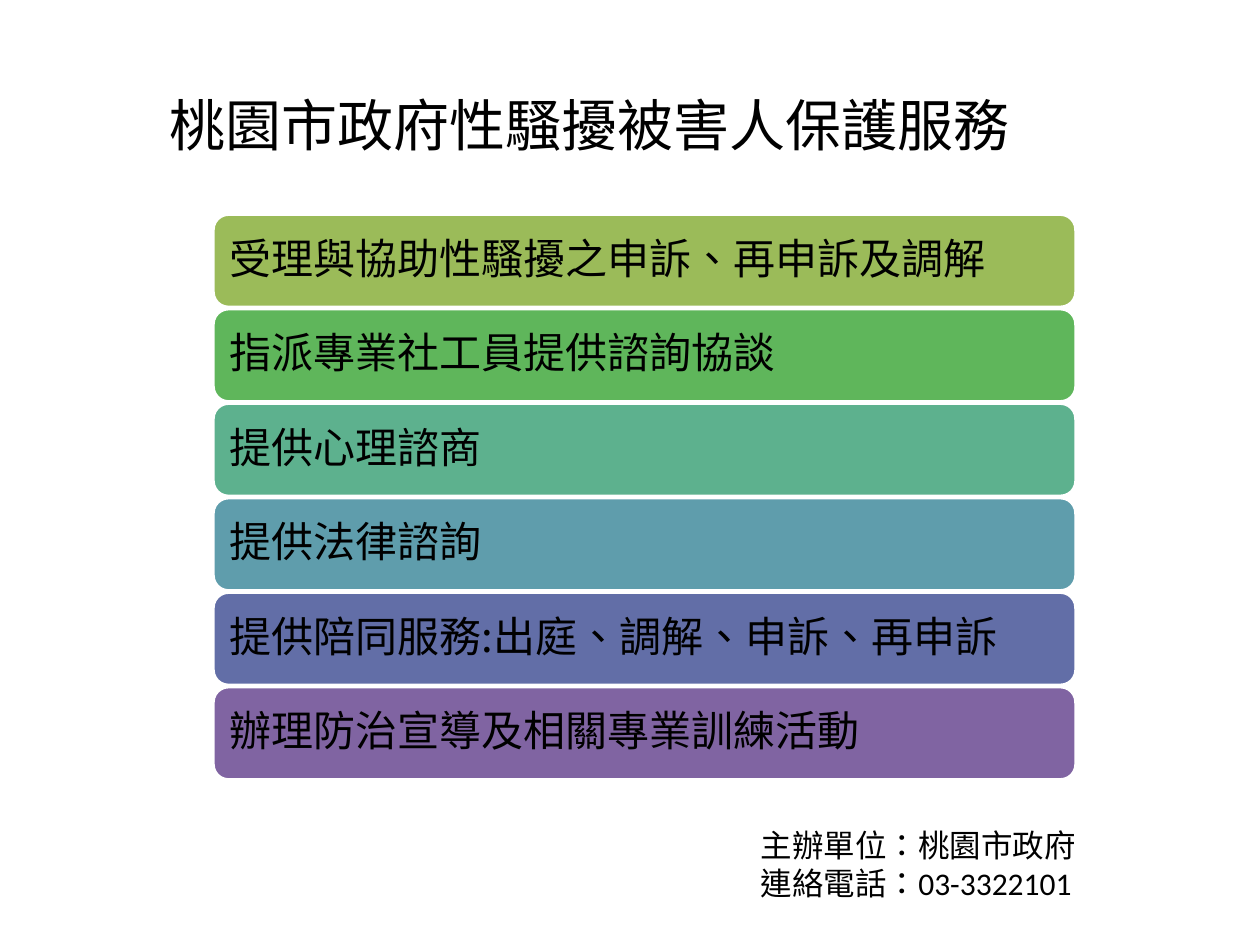
from dataclasses import dataclass

from lxml.etree import SubElement
from pptx import Presentation
from pptx.dml.color import RGBColor
from pptx.enum.lang import MSO_LANGUAGE_ID
from pptx.enum.shapes import MSO_SHAPE
from pptx.enum.text import MSO_ANCHOR, PP_ALIGN
from pptx.oxml.ns import qn
from pptx.util import Pt


@dataclass(frozen=True)
class Theme:
    text: str = "000000"
    outline: str = "FFFFFF"
    title_size: float = 32
    service_size: float = 24
    contact_size: float = 18
    title_font: str = "Noto Sans CJK SC"
    service_font: str = "Noto Sans CJK JP"
    contact_font: str = "Calibri"


@dataclass(frozen=True)
class Service:
    text: str
    color: str


@dataclass(frozen=True)
class Area:
    left: float
    top: float
    width: float
    height: float

    def lengths(self) -> tuple:
        return Pt(self.left), Pt(self.top), Pt(self.width), Pt(self.height)


THEME = Theme()
TITLE = "桃園市政府性騷擾被害人保護服務"
SERVICES = [
    Service("受理與協助性騷擾之申訴、再申訴及調解", "9BBB59"),
    Service("指派專業社工員提供諮詢協談", "5FB65B"),
    Service("提供心理諮商", "5DB18E"),
    Service("提供法律諮詢", "5F9DAC"),
    Service("提供陪同服務:出庭、調解、申訴、再申訴", "626EA7"),
    Service("辦理防治宣導及相關專業訓練活動", "8064A2"),
]
CONTACT = ["主辦單位：桃園市政府", "連絡電話：03-3322101"]

TITLE_AREA = Area(76.3, 26, 521.3, 90)
FIRST_BAR = Area(121.7, 122.4, 493.2, 53.3)
BAR_PITCH = 54
CONTACT_AREA = Area(427.7, 468.7, 260.6, 51)


def apply(target, values: dict) -> None:
    for name, value in values.items():
        setattr(target, name, value)


def write(box, lines: list[str], size: float, font: str,
          frame_format: dict, para_format: dict, east_asian: bool = True) -> None:
    frame = box.text_frame
    apply(frame, {"word_wrap": True, **frame_format})
    for index, line in enumerate(lines):
        para = frame.paragraphs[0] if index == 0 else frame.add_paragraph()
        apply(para, para_format)
        span = para.add_run()
        span.text = line
        apply(span.font, {"size": Pt(size), "name": font,
                          "language_id": MSO_LANGUAGE_ID.TRADITIONAL_CHINESE})
        span.font.color.rgb = RGBColor.from_string(THEME.text)
        if east_asian:
            SubElement(span._r.get_or_add_rPr(), qn("a:ea"), typeface=font)


def draw_service(page, service: Service, area: Area) -> None:
    bar = page.shapes.add_shape(MSO_SHAPE.ROUNDED_RECTANGLE, *area.lengths())
    bar.shadow.inherit = False
    bar.fill.solid()
    bar.fill.fore_color.rgb = RGBColor.from_string(service.color)
    bar.line.color.rgb = RGBColor.from_string(THEME.outline)
    bar.line.width = Pt(2)
    margins = {f"margin_{side}": Pt(7.2) for side in ("left", "top", "right", "bottom")}
    write(bar, [service.text], THEME.service_size, THEME.service_font,
          {"vertical_anchor": MSO_ANCHOR.MIDDLE, **margins},
          {"alignment": PP_ALIGN.LEFT, "line_spacing": 0.9, "space_after": Pt(8.4)})


def main() -> None:
    deck = Presentation()
    apply(deck, {"slide_width": Pt(720), "slide_height": Pt(540)})
    page = deck.slides.add_slide(deck.slide_layouts[6])

    # Title
    title = page.shapes.add_textbox(*TITLE_AREA.lengths())
    write(title, [TITLE], THEME.title_size, THEME.title_font,
          {"vertical_anchor": MSO_ANCHOR.MIDDLE}, {"alignment": PP_ALIGN.CENTER})

    # Service bars
    for row, service in enumerate(SERVICES):
        top = FIRST_BAR.top + row * BAR_PITCH
        draw_service(page, service,
                     Area(FIRST_BAR.left, top, FIRST_BAR.width, FIRST_BAR.height))

    # Organiser and telephone
    contact = page.shapes.add_textbox(*CONTACT_AREA.lengths())
    write(contact, CONTACT, THEME.contact_size, THEME.contact_font, {}, {},
          east_asian=False)

    deck.save("out.pptx")


if __name__ == "__main__":
    main()
